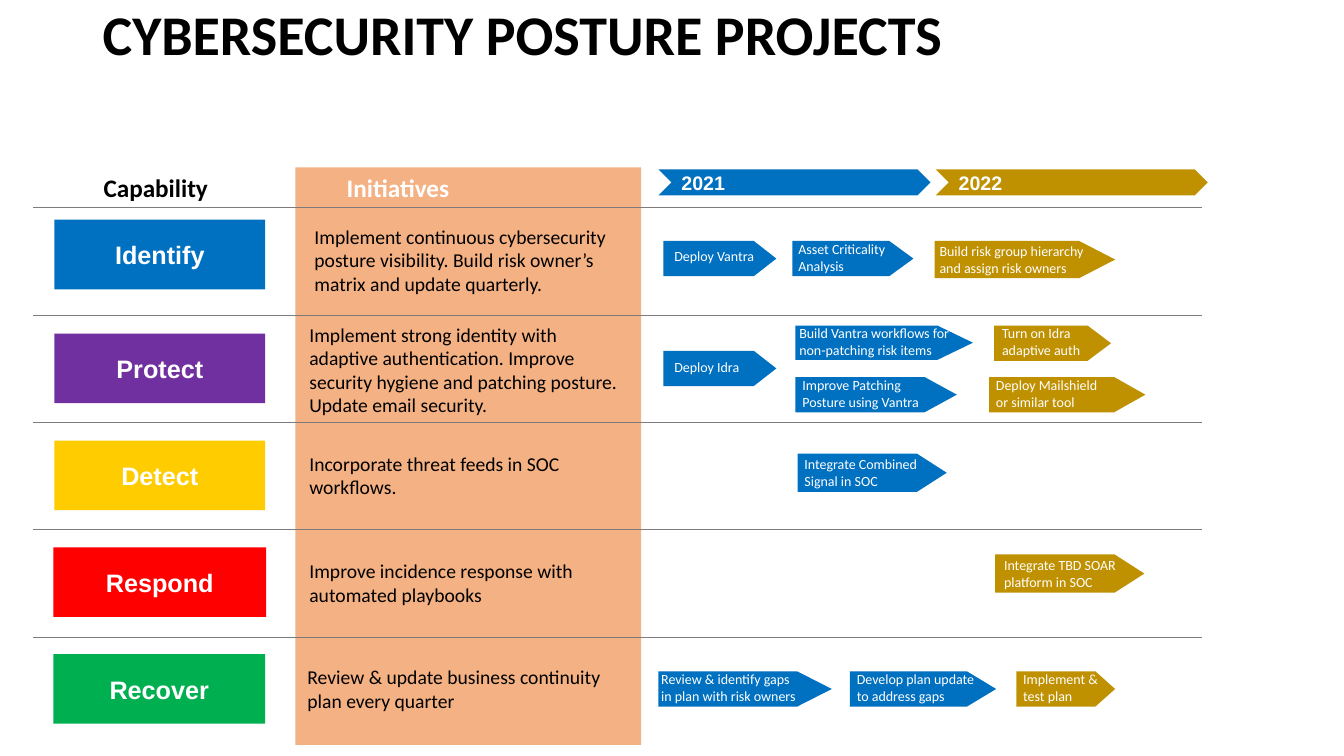
from lxml import etree
from pptx import Presentation
from pptx.dml.color import RGBColor
from pptx.enum.shapes import MSO_CONNECTOR, MSO_SHAPE
from pptx.enum.text import MSO_ANCHOR, MSO_AUTO_SIZE, PP_ALIGN
from pptx.oxml.ns import qn
from pptx.util import Emu, Pt

RECTANGLE = MSO_SHAPE.RECTANGLE
CHEVRON = MSO_SHAPE.CHEVRON
PENTAGON = MSO_SHAPE.FLOWCHART_OFFPAGE_CONNECTOR
STRAIGHT = MSO_CONNECTOR.STRAIGHT
LEFT, CENTER = PP_ALIGN.LEFT, PP_ALIGN.CENTER
TOP, MIDDLE = MSO_ANCHOR.TOP, MSO_ANCHOR.MIDDLE
GROW = MSO_AUTO_SIZE.SHAPE_TO_FIT_TEXT

EMU_PER_PX = 9144  # 100 px to the inch
BLACK, WHITE, GRAY = "000000", "FFFFFF", "7C7C7C"
BLUE, GOLD, PEACH = "0070C0", "BF9000", "F4B183"
RULE_TOP, ROW_STEP = 206, 106.5
ONE_LINE, TWO_LINES = 27, 44  # label heights

# name, colour, left, top, width
CAPABILITIES = [
    ("Identify", BLUE, 54, 218, 209),
    ("Protect", "7030A0", 54, 331, 209),
    ("Detect", "FFCC00", 54, 437, 209),
    ("Respond", "FF0000", 53, 543, 211),
    ("Recover", "00B050", 53, 649, 210),
]

# text, left, top, width, height
INITIATIVES = [
    ("Implement continuous cybersecurity posture visibility. "
     "Build risk owner’s matrix and update quarterly.", 302, 218, 323, 81),
    ("Implement strong identity with adaptive authentication. Improve security "
     "hygiene and patching posture. Update email security.", 297, 315, 327, 104),
    ("Incorporate threat feeds in SOC workflows.", 297, 443, 327, 57),
    ("Improve incidence response with automated playbooks", 297, 550, 327, 57),
    ("Review & update business continuity plan every quarter", 295, 655, 330, 57),
]

# text, colour, arrow box, label box
PROJECTS = [
    ("Deploy Vantra", BLUE, (658, 239, 112, 35), (659, 241, 120, ONE_LINE)),
    ("Asset Criticality Analysis", BLUE,
     (786, 239, 120, 35), (782, 234, 143, TWO_LINES)),
    ("Build risk group hierarchy and assign risk owners", GOLD,
     (927, 239, 179, 37), (922, 236, 179, TWO_LINES)),
    ("Deploy Idra", BLUE, (658, 348, 112, 35), (659, 351, 120, ONE_LINE)),
    ("Build Vantra workflows for non-patching risk items", BLUE,
     (789, 323, 176, 34), (783, 317, 187, TWO_LINES)),
    ("Improve Patching Posture using Vantra", BLUE,
     (789, 374, 160, 35), (786, 369, 136, TWO_LINES)),
    ("Turn on Idra adaptive auth", GOLD,
     (986, 323, 116, 35), (984, 317, 99, TWO_LINES)),
    ("Deploy Mailshield or similar tool", GOLD,
     (981, 374, 155, 35), (978, 369, 128, TWO_LINES)),
    ("Integrate Combined Signal in SOC", BLUE,
     (791, 450, 148, 38), (788, 447, 148, TWO_LINES)),
    ("Integrate TBD SOAR platform in SOC", GOLD,
     (987, 550, 148, 38), (986, 547, 148, TWO_LINES)),
    ("Review & identify gaps in plan with risk owners", BLUE,
     (653, 666, 172, 35), (646, 660, 154, TWO_LINES)),
    ("Develop plan update to address gaps", BLUE,
     (843, 666, 145, 35), (840, 660, 140, TWO_LINES)),
    ("Implement & test plan", GOLD,
     (1008, 666, 98, 35), (1005, 660, 100, TWO_LINES)),
]


def px(length):
    return Emu(round(length * EMU_PER_PX))


def color(hex_code):
    return RGBColor.from_string(hex_code)


def write(frame, text, *, size, font="Calibri", ink=BLACK, bold=False,
          align=LEFT, anchor=TOP, wrap=True, spacing=None):
    frame.word_wrap = wrap
    frame.vertical_anchor = anchor
    para = frame.paragraphs[0]
    para.alignment = align
    para.line_spacing = spacing
    span = para.add_run()
    span.text = text
    span.font.name = font
    span.font.size = Pt(size)
    span.font.bold = bold
    span.font.color.rgb = color(ink)


def add_block(page, kind, left, top, width, height, fill):
    block = page.shapes.add_shape(kind, px(left), px(top), px(width), px(height))
    block.shadow.inherit = False
    block.fill.solid()
    block.fill.fore_color.rgb = color(fill)
    block.line.fill.background()
    return block


def add_label(page, text, left, top, width, height, **style):
    box = page.shapes.add_textbox(px(left), px(top), px(width), px(height))
    write(box.text_frame, text, **style)
    box.text_frame.auto_size = GROW


def add_rule(page, y):
    rule = page.shapes.add_connector(STRAIGHT, px(33), px(y), px(1192), px(y))
    rule.line.color.rgb = color(GRAY)
    rule.line.width = Pt(0.5)
    etree.SubElement(rule._element.spPr, qn("a:effectLst"))


def add_project(page, text, fill, arrow, label):
    # The downward pentagon is turned about its centre to point right
    left, top, width, height = arrow
    shift = (width - height) / 2
    block = add_block(page, PENTAGON, left + shift, top - shift,
                      height, width, fill)
    block.rotation = 270
    add_label(page, text, *label, size=10, ink=WHITE)


def main():
    deck = Presentation()
    deck.slide_width, deck.slide_height = px(1333), px(750)
    page = deck.slides.add_slide(deck.slide_layouts[6])

    # Title and column headings
    add_block(page, RECTANGLE, 293, 166, 343, 573, PEACH)
    add_label(page, "CYBERSECURITY POSTURE PROJECTS", 92, 2, 1150, 109,
              size=40, bold=True, spacing=0.9)
    add_label(page, "Initiatives", 334, 166, 598, 40,
              size=18, ink=WHITE, bold=True)
    add_label(page, "Capability", 50, 166, 209, 40,
              size=18, bold=True, align=CENTER)
    for year, left, fill in (("2021", 653, BLUE), ("2022", 928, GOLD)):
        chevron = add_block(page, CHEVRON, left, 168, 270, 26, fill)
        write(chevron.text_frame, year, size=14, font="Arial", ink=WHITE,
              bold=True, anchor=MIDDLE, wrap=False)

    # Capability rows
    for index, (name, fill, left, top, width) in enumerate(CAPABILITIES):
        add_rule(page, RULE_TOP + index * ROW_STEP)
        block = add_block(page, RECTANGLE, left, top, width, 69, fill)
        write(block.text_frame, name, size=18, font="Arial", ink=WHITE,
              bold=True, align=CENTER, anchor=MIDDLE)
    for initiative in INITIATIVES:
        add_label(page, *initiative, size=14)

    # Project arrows
    for project in PROJECTS:
        add_project(page, *project)

    deck.save("out.pptx")


if __name__ == "__main__":
    main()
